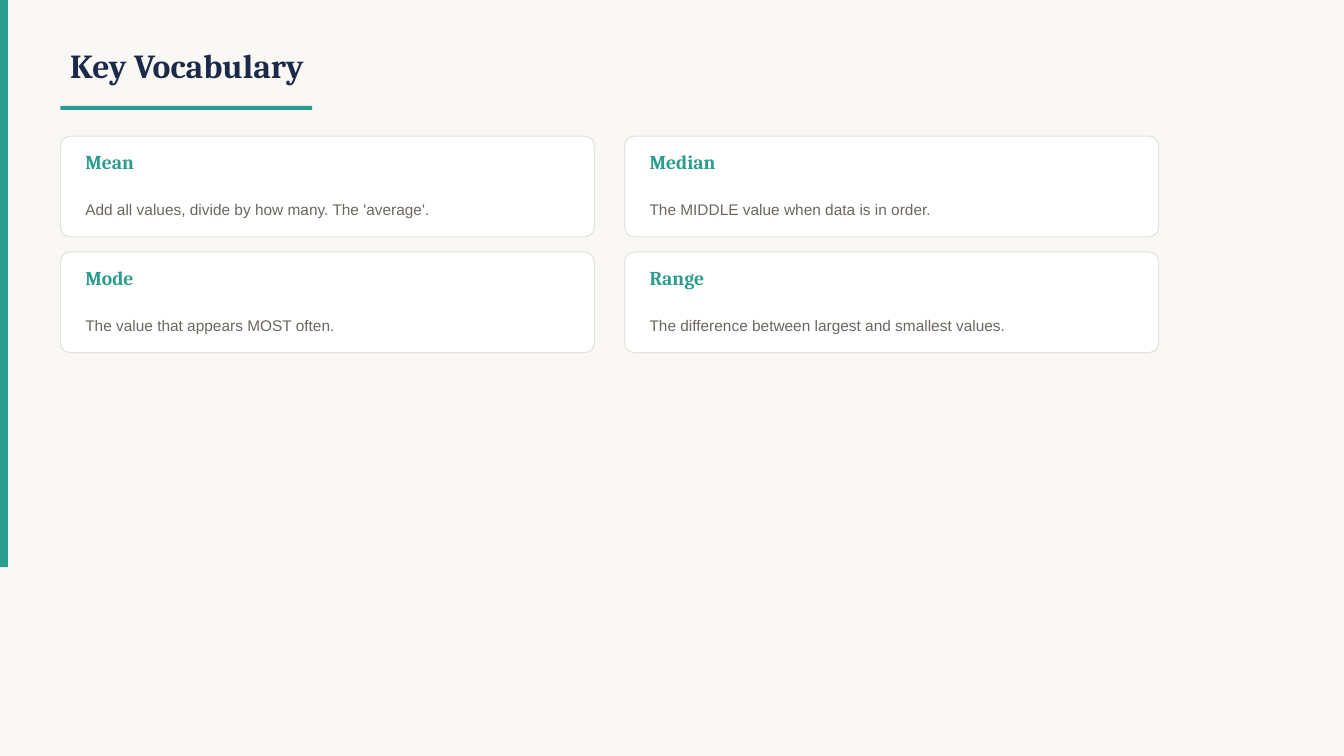
from pptx import Presentation
from pptx import util as u
from pptx.dml.color import RGBColor
from pptx.enum import shapes, text

CREAM = RGBColor(0xFA, 0xF8, 0xF5)
TEAL = RGBColor(0x2A, 0x9D, 0x8F)
NAVY = RGBColor(0x1B, 0x2A, 0x4A)
GRAY = RGBColor(0x6B, 0x66, 0x60)
WHITE = RGBColor(0xFF, 0xFF, 0xFF)
BORDER = RGBColor(0xE5, 0xE2, 0xDC)

# Card grid, in centimetres
COLUMNS = 2
GRID_LEFT, GRID_TOP = 1.52, 3.43
COLUMN_STEP, ROW_STEP = 14.22, 2.92
CARD_WIDTH, CARD_HEIGHT = 13.46, 2.54
CARD_PADDING = 0.38

VOCABULARY = [
    ("Mean", "Add all values, divide by how many. The 'average'."),
    ("Median", "The MIDDLE value when data is in order."),
    ("Mode", "The value that appears MOST often."),
    ("Range", "The difference between largest and smallest values."),
]


def add_box(slide, kind, left, top, width, height, fill):
    shape = slide.shapes.add_shape(
        kind, u.Cm(left), u.Cm(top), u.Cm(width), u.Cm(height))
    shape.shadow.inherit = False
    shape.fill.solid()
    shape.fill.fore_color.rgb = fill
    shape.line.fill.background()
    return shape


def add_text(slide, left, top, width, height, words, size, font_name, color,
             bold=False, line_spacing=None):
    box = slide.shapes.add_textbox(
        u.Cm(left), u.Cm(top), u.Cm(width), u.Cm(height))
    frame = box.text_frame
    frame.word_wrap = True
    frame.vertical_anchor = text.MSO_ANCHOR.MIDDLE
    paragraph = frame.paragraphs[0]
    paragraph.line_spacing = line_spacing
    run = paragraph.add_run()
    run.text = words
    run.font.size = u.Pt(size)
    run.font.name = font_name
    run.font.color.rgb = color
    run.font.bold = bold


def add_card(slide, left, top, term, definition):
    card = add_box(slide, shapes.MSO_SHAPE.ROUNDED_RECTANGLE,
                   left, top, CARD_WIDTH, CARD_HEIGHT, WHITE)
    card.adjustments[0] = 0.1
    card.line.color.rgb = BORDER
    card.line.width = u.Pt(0.75)
    text_left = left + CARD_PADDING
    add_text(slide, text_left, top + 0.2, 12.7, 0.89,
             term, 14, "Cambria", TEAL, bold=True)
    add_text(slide, text_left, top + 1.14, 12.7, 1.27,
             definition, 11, "Arial", GRAY, line_spacing=1.3)


def main():
    presentation = Presentation()
    presentation.slide_width = u.Cm(33.87)
    presentation.slide_height = u.Cm(19.05)
    slide = presentation.slides.add_slide(presentation.slide_layouts[6])
    slide.background.fill.solid()
    slide.background.fill.fore_color.rgb = CREAM

    # Side bar, title and underline
    rectangle = shapes.MSO_SHAPE.RECTANGLE
    add_box(slide, rectangle, 0, 0, 0.2, 14.29, TEAL)
    add_text(slide, GRID_LEFT, 0.76, 25.4, 1.78,
             "Key Vocabulary", 24, "Cambria", NAVY, bold=True)
    add_box(slide, rectangle, GRID_LEFT, 2.67, 6.35, 0.1, TEAL)

    # Vocabulary cards
    for index, (term, definition) in enumerate(VOCABULARY):
        row, column = divmod(index, COLUMNS)
        add_card(slide, GRID_LEFT + column * COLUMN_STEP,
                 GRID_TOP + row * ROW_STEP, term, definition)

    presentation.save("out.pptx")


if __name__ == "__main__":
    main()
